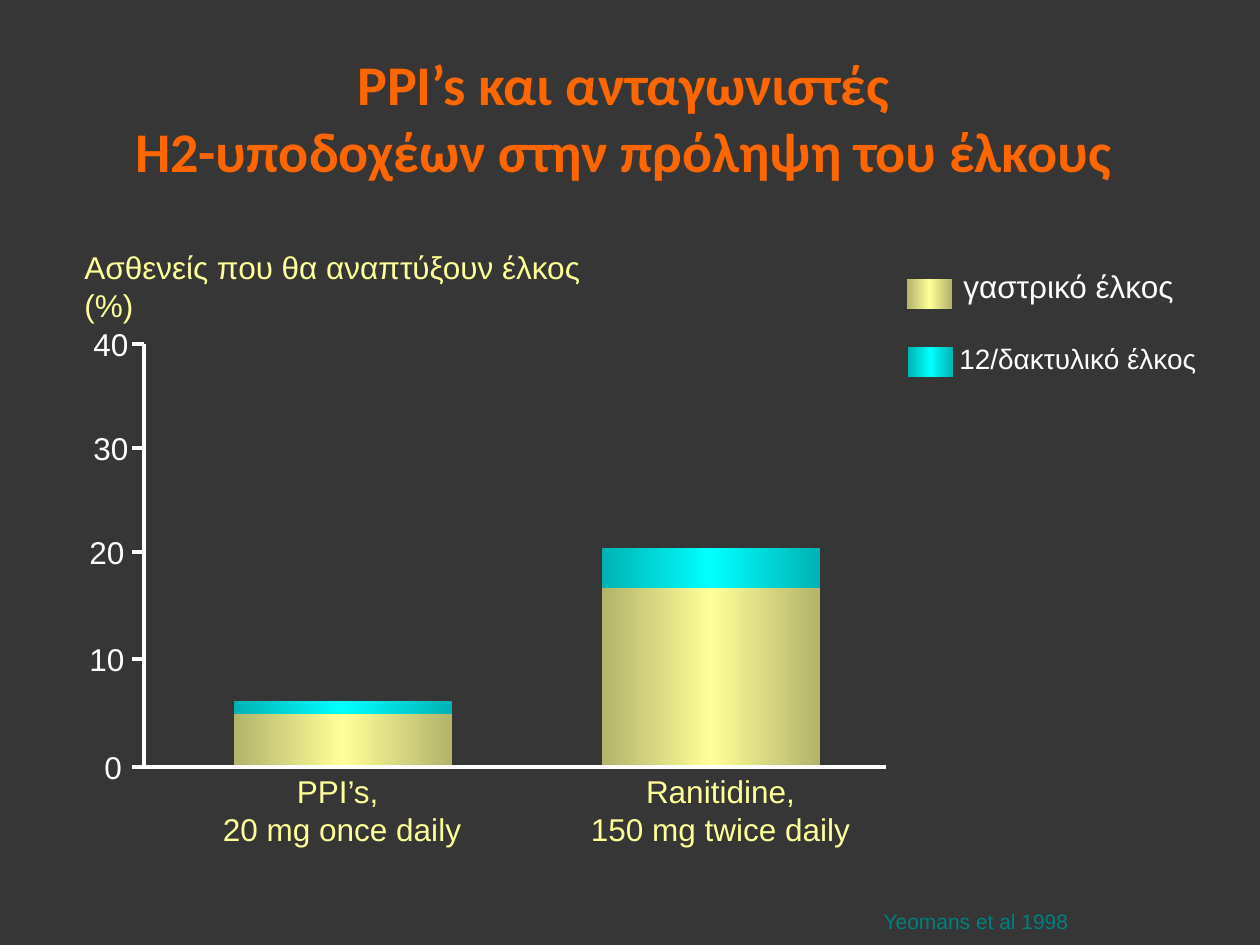
import copy
import pptx
import pptx.dml.color
import pptx.enum.shapes
import pptx.enum.text
import pptx.oxml
import pptx.oxml.ns
import pptx.util

RGBColor = pptx.dml.color.RGBColor
BACKGROUND = RGBColor(0x36, 0x36, 0x36)
ORANGE = RGBColor(0xFF, 0x66, 0x00)
TEAL = RGBColor(0x00, 0x80, 0x80)
WHITE = RGBColor(0xFF, 0xFF, 0xFF)
YELLOW = RGBColor(0xFF, 0xFF, 0x99)
DARK_YELLOW = RGBColor(0xB3, 0xB3, 0x6B)
CYAN = RGBColor(0x00, 0xFF, 0xFF)
DARK_CYAN = RGBColor(0x00, 0xB3, 0xB3)
GASTRIC = (DARK_YELLOW, YELLOW, DARK_YELLOW)
DUODENAL = (DARK_CYAN, CYAN, DARK_CYAN)

CENTER = pptx.enum.text.PP_ALIGN.CENTER
LEFT = pptx.enum.text.PP_ALIGN.LEFT


def px(length):
    return pptx.util.Emu(round(length * 914400 / 126))


def add_text(slide, box, paragraphs, size, color, align=LEFT, font="Arial",
             bold=False, spacing=None, middle=False):
    frame = slide.shapes.add_textbox(*map(px, box)).text_frame
    frame.word_wrap = True
    if middle:
        frame.vertical_anchor = pptx.enum.text.MSO_ANCHOR.MIDDLE
    for index, lines in enumerate(paragraphs):
        paragraph = frame.add_paragraph() if index else frame.paragraphs[0]
        paragraph.alignment = align
        if spacing:
            paragraph.line_spacing = spacing
        for number, line in enumerate(lines.split("\n")):
            if number:
                paragraph.add_line_break()
            run = paragraph.add_run()
            run.text = line
            run.font.size = pptx.util.Pt(size)
            run.font.name = font
            run.font.bold = bold
            run.font.color.rgb = color


def add_block(slide, box, shades):
    block = slide.shapes.add_shape(
        pptx.enum.shapes.MSO_SHAPE.RECTANGLE, *map(px, box))
    block.shadow.inherit = False
    block.line.fill.background()
    block.fill.gradient()
    block.fill.gradient_angle = 0
    stops = block.element.find(".//" + pptx.oxml.ns.qn("a:gsLst"))
    stops.append(copy.deepcopy(stops[0]))
    for index, stop in enumerate(block.fill.gradient_stops):
        stop.position = index / 2
        stop.color.rgb = shades[index]


def add_line(slide, x1, y1, x2, y2):
    line = slide.shapes.add_connector(
        pptx.enum.shapes.MSO_CONNECTOR.STRAIGHT, *map(px, (x1, y1, x2, y2)))
    line.line.color.rgb = WHITE
    line.line.width = pptx.util.Pt(2.25)
    line.element.spPr.append(pptx.oxml.parse_xml(
        "<a:effectLst %s/>" % pptx.oxml.ns.nsdecls("a")))


def add_title(slide, box):
    add_text(slide, box,
             ["PPI’s και ανταγωνιστές \nH2-υποδοχέων στην πρόληψη του έλκους "],
             32, ORANGE, CENTER, "Calibri", True, middle=True)


def add_legend(slide, box):
    left, top, width, _ = box
    entries = [
        ("γαστρικό έλκος", 18, GASTRIC, 0, 18, 44, 0),
        ("12/δακτυλικό έλκος", 16, DUODENAL, 1, 86, 40, 74),
    ]
    for label, size, shades, key_x, key_y, label_x, label_y in entries:
        add_block(slide, (left + key_x, top + key_y, 45, 30), shades)
        add_text(slide, (left + label_x, top + label_y, width - label_x, 50),
                 [label], size, WHITE)


def add_axes(slide, box):
    left, top, width, height = box
    add_line(slide, left, top, left, top + height)
    ticks = [("40", 0, 63, 60), ("30", 104, 63, 60), ("20", 208, 67, 60),
             ("10", 315, 67, 60), ("0", height, 52, 43)]
    for label, offset, indent, label_width in ticks:
        y = top + offset
        add_line(slide, left - 12, y, left, y)
        add_text(slide, (left - indent, y - 25, label_width, 50),
                 [label], 18, WHITE)
    add_line(slide, left, top + height, left + width, top + height)


def add_bars(slide, box):
    left, top, _, height = box
    base = top + height
    groups = [
        (["PPI’s, ", "20 mg once daily"], 90, 53, 13, 64, 268),
        (["Ranitidine,", "150 mg twice daily"], 458, 179, 40, 419, 315),
    ]
    for label, bar_x, gastric, duodenal, label_x, label_width in groups:
        x = left + bar_x
        add_block(slide, (x, base - gastric, 218, gastric), GASTRIC)
        add_block(slide, (x, base - gastric - duodenal, 218, duodenal), DUODENAL)
        add_text(slide, (left + label_x, base - 1, label_width, 88),
                 label, 18, YELLOW, CENTER)


def add_ulcer_chart(slide, box):
    left, top, _, _ = box
    add_text(slide, (left - 72, top - 102, 611, 88),
             ["Ασθενείς που θα αναπτύξουν έλκος", "(%)"], 18, YELLOW)
    add_bars(slide, box)
    add_axes(slide, box)


def add_citation(slide, box):
    add_text(slide, box, ["Yeomans et al 1998"], 12, TEAL, CENTER, spacing=0.9)


def main():
    deck = pptx.Presentation()
    deck.slide_width = px(1260)
    deck.slide_height = px(945)
    slide = deck.slides.add_slide(deck.slide_layouts[6])
    slide.background.fill.solid()
    slide.background.fill.fore_color.rgb = BACKGROUND
    add_title(slide, (0, 38, 1260, 157))
    add_citation(slide, (816, 905, 320, 35))
    add_legend(slide, (907, 261, 345, 124))
    add_ulcer_chart(slide, (144, 344, 742, 423))
    deck.save("out.pptx")


if __name__ == "__main__":
    main()
